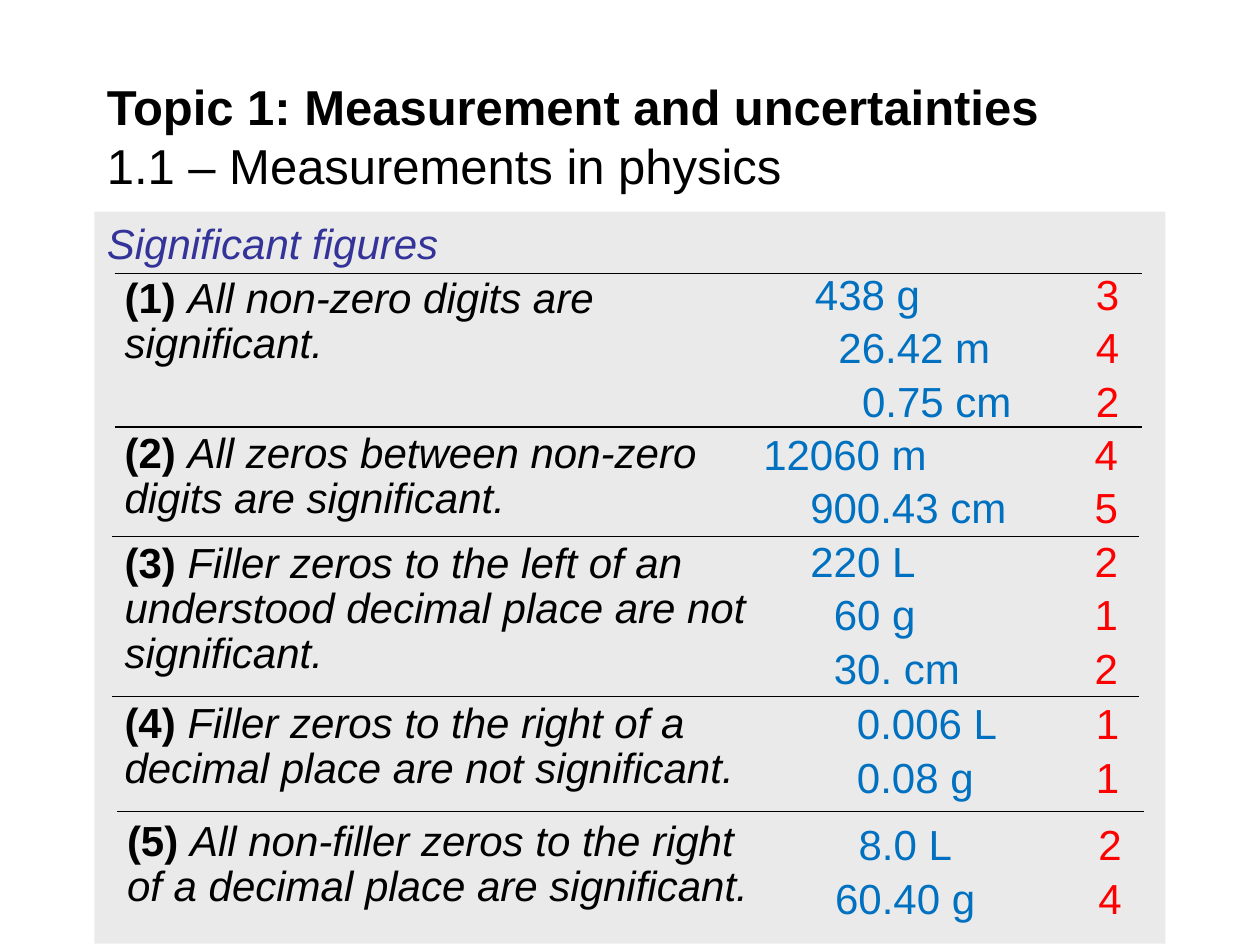
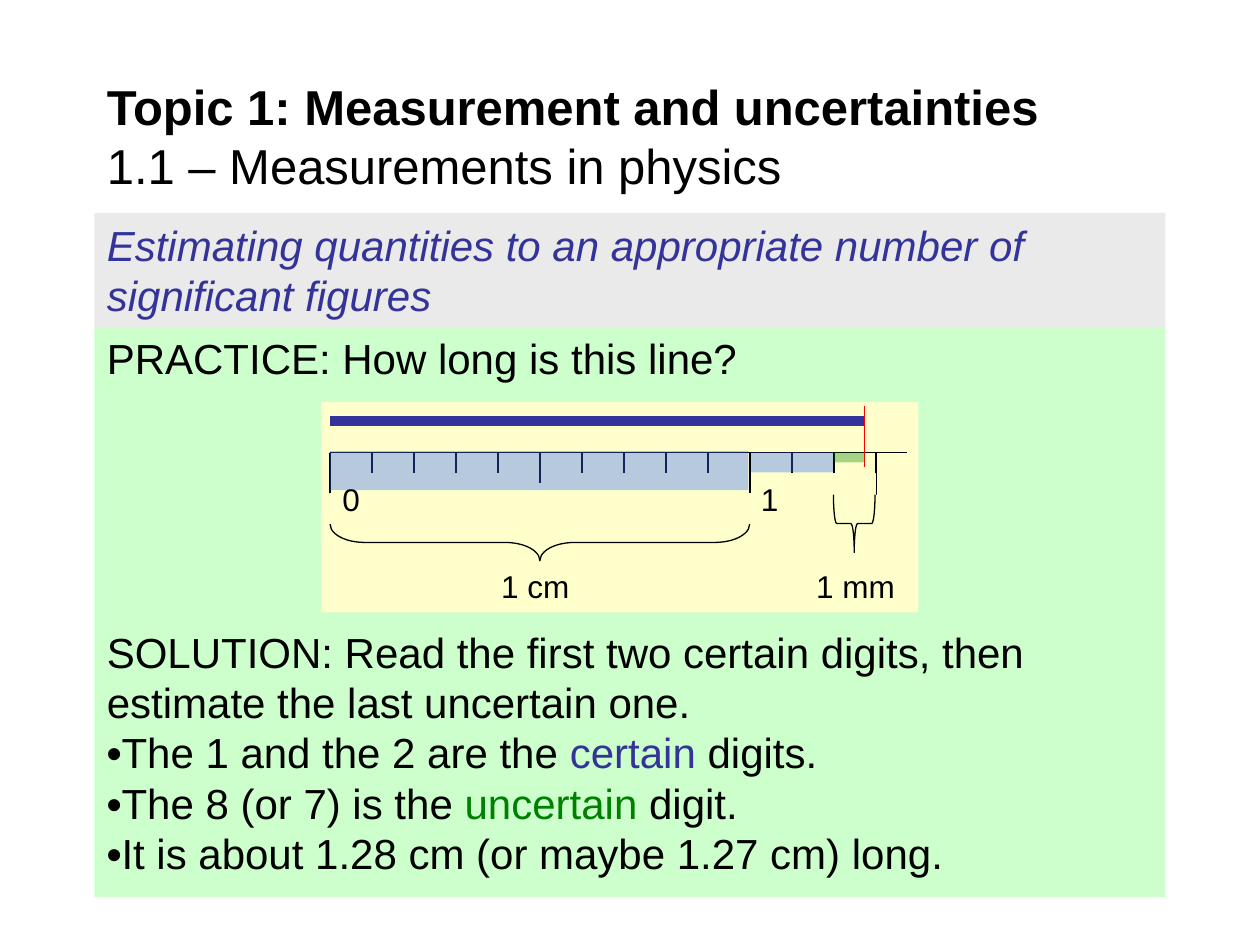
from dataclasses import dataclass

from lxml.etree import SubElement
from pptx import Presentation
from pptx.dml.color import RGBColor
from pptx.enum.shapes import MSO_CONNECTOR, MSO_SHAPE as Preset
from pptx.enum.text import MSO_ANCHOR as Anchor, PP_ALIGN as Align
from pptx.oxml.ns import qn
from pptx.util import Inches, Pt

# Shared grid: 10 columns by 7.5 rows
WIDTH, HEIGHT = Inches(10), Inches(7.5)
COLUMN, ROW = WIDTH / 10, HEIGHT / 7.5
MARGIN, CONTENT_WIDTH = 0.75, 8.5

# Shared look
FONT = "Arial"
BODY = 24
LEADING, TIGHT = 28.8, 25.8
GAP = 4.8
STEP = BODY * 0.28
HAIRLINE = 0.75
BLACK, INDIGO, BLUE, RED, GREEN = "000000", "333399", "0070C0", "FF0000", "008000"
GREY, MINT, CREAM, TINT = "EAEAEA", "CCFFCC", "FFFFCC", "3366FF"


@dataclass
class Box:
    left: float
    top: float
    width: float
    height: float

    def emu(self) -> list[int]:
        return [round(self.left * COLUMN), round(self.top * ROW),
                round(self.width * COLUMN), round(self.height * ROW)]


@dataclass
class Span:
    text: str
    color: str | None = None
    bold: bool | None = None
    italic: bool | None = None


@dataclass
class Line:
    spans: list[Span]
    size: int = BODY
    leading: float = LEADING
    color: str = BLACK
    before: float = 0
    indent: float = 0
    italic: bool = False
    bold: bool = False


@dataclass
class Rule:
    text: str
    examples: list[tuple[int, str]]
    figures: str
    line_at: tuple[float, float]
    rule_at: tuple[float, float]
    rule_width: float
    examples_at: tuple[float, float]
    figures_left: float


RULES = [
    Rule("All non-zero digits are significant.",
         [(0, "438 g"), (2, "26.42 m"), (4, "0.75 cm")], "342",
         (0.91, 2.17), (0.89, 2.15), 5.35, (6.37, 2.12), 8.6),
    Rule("All zeros between non-zero digits are significant.",
         [(0, "12060 m"), (4, "900.43 cm")], "45",
         (0.91, 3.39), (0.89, 3.38), 5.02, (5.96, 3.39), 8.59),
    Rule("Filler zeros to the left of an understood decimal place are not significant.",
         [(1, "220 L"), (3, "60 g"), (3, "30. cm")], "212",
         (0.89, 4.26), (0.89, 4.25), 5.69, (6.24, 4.24), 8.59),
    Rule("Filler zeros to the right of a decimal place are not significant.",
         [(4, "0.006 L"), (4, "0.08 g")], "11",
         (0.89, 5.53), (0.89, 5.52), 5.46, (6.33, 5.53), 8.6),
    Rule("All non-filler zeros to the right of a decimal place are significant.",
         [(2, "8.0 L"), (0, "60.40 g")], "24",
         (0.93, 6.44), (0.91, 6.46), 5.21, (6.53, 6.49), 8.62),
]


def rgb(color: str) -> RGBColor:
    return RGBColor.from_string(color)


def write(frame, lines: list[Line], anchor=Anchor.TOP, wrap: bool = True) -> None:
    frame.word_wrap = wrap
    frame.vertical_anchor = anchor
    for number, line in enumerate(lines):
        para = frame.add_paragraph() if number else frame.paragraphs[0]
        para.alignment = Align.LEFT
        para.line_spacing = Pt(line.leading)
        para.space_before = Pt(line.before)
        props = para._p.get_or_add_pPr()
        props.set("marL", str(Pt(line.indent)))
        props.set("indent", "0")
        font = para.font
        font.name, font.size = FONT, Pt(line.size)
        font.bold, font.italic = line.bold, line.italic
        font.color.rgb = rgb(line.color)
        for span in line.spans:
            run = para.add_run()
            run.text = span.text
            if span.bold is not None:
                run.font.bold = span.bold
            if span.italic is not None:
                run.font.italic = span.italic
            if span.color:
                run.font.color.rgb = rgb(span.color)


def text(slide, box: Box, lines: list[Line], anchor=Anchor.TOP, wrap: bool = True) -> None:
    write(slide.shapes.add_textbox(*box.emu()).text_frame, lines, anchor, wrap)


def block(slide, box: Box, fill: str | None = None, lines: list[Line] | None = None,
          alpha: int = 100, outline: str | None = None, preset=Preset.RECTANGLE):
    shape = slide.shapes.add_shape(preset, *box.emu())
    shape.shadow.inherit = False
    if fill:
        shape.fill.solid()
        shape.fill.fore_color.rgb = rgb(fill)
    else:
        shape.fill.background()
    if outline:
        shape.line.color.rgb = rgb(outline)
        shape.line.width = Pt(HAIRLINE)
    else:
        shape.line.fill.background()
    if alpha < 100:
        color = shape.fill._xPr.find(".//" + qn("a:srgbClr"))
        SubElement(color, qn("a:alpha"), val=str(alpha * 1000))
    if lines:
        write(shape.text_frame, lines)
    return shape


def stroke(slide, start: tuple[float, float], end: tuple[float, float],
           color: str = BLACK, weight: float = HAIRLINE) -> None:
    ends = [round(value) for x, y in (start, end) for value in (x * COLUMN, y * ROW)]
    line = slide.shapes.add_connector(MSO_CONNECTOR.STRAIGHT, *ends)
    line.line.color.rgb = rgb(color)
    line.line.width = Pt(weight)
    SubElement(line._element.spPr, qn("a:effectLst"))


def brace(slide, box: Box, curve: float) -> None:
    shape = block(slide, box, outline=BLACK, preset=Preset.LEFT_BRACE)
    shape.rotation = 270
    shape.adjustments[0] = curve


def title(slide) -> None:
    text(slide, Box(MARGIN, 0.58, CONTENT_WIDTH, 0.98), [
        Line([Span("Topic 1: Measurement and uncertainties")], 28, 34, bold=True),
        Line([Span("1.1 – Measurements in physics")], 28, 34),
    ], Anchor.MIDDLE)


def panel(slide, top: float, height: float, fill: str, lines: list[Line]) -> None:
    block(slide, Box(MARGIN, top, CONTENT_WIDTH, height), fill, lines)


def topic(words: str) -> list[Line]:
    return [Line([Span(words)], color=INDIGO, italic=True)]


def stack(slide, left: float, top: float, width: float,
          entries: list[tuple[int, str]], color: str) -> None:
    """Short entries one under another, each indented by a number of steps."""
    lines = [Line([Span(entry)], leading=TIGHT, color=color,
                  before=GAP if number else 0, indent=steps * STEP)
             for number, (steps, entry) in enumerate(entries)]
    text(slide, Box(left, top, width, 0.43 * len(lines) + 0.1), lines)


def significant_figures(slide) -> None:
    panel(slide, 1.68, 5.81, GREY, topic("Significant figures"))
    title(slide)
    for number, rule in enumerate(RULES, 1):
        left, top = rule.line_at
        stroke(slide, (left, top), (left + 8.15, top))
        text(slide, Box(*rule.rule_at, rule.rule_width, 0.9), [
            Line([Span(f"({number}) ", bold=True, italic=False), Span(rule.text)],
                 leading=TIGHT, italic=True)])
        left, top = rule.examples_at
        stack(slide, left, top, 2.2, rule.examples, BLUE)
        stack(slide, rule.figures_left, top, 0.46,
              [(0, figure) for figure in rule.figures], RED)


def ruler(slide) -> None:
    zero, edge, millimetre = 2.62, 3.59, 1 / 3
    measured = 6.86
    block(slide, Box(2.55, 3.19, 4.74, 1.67), CREAM)
    stroke(slide, (zero, 3.34), (measured, 3.34), INDIGO, 6)

    # Scale: a row of cells, covered so that marks of three lengths remain
    for cell in range(13):
        block(slide, Box(zero + cell * millimetre, edge, millimetre, millimetre),
              outline=BLACK)
    for cover in [Box(zero, 3.51, 4.33, 0.08), Box(zero, 3.92, 4.33, 0.08),
                  Box(2.78, 3.76, 1.33, 0.17), Box(4.45, 3.76, 1.33, 0.17),
                  Box(6.2, 3.76, 0.75, 0.17), Box(4.12, 3.84, 0.33, 0.17)]:
        block(slide, cover, CREAM, outline=CREAM)
    stroke(slide, (zero, edge), (7.2, edge))

    # Labels and braces
    for words, left, top, width in [("0", zero, 3.76, 0.34), ("1", 5.94, 3.76, 0.34),
                                    ("1 cm", 3.88, 4.45, 0.74),
                                    ("1 mm", 6.38, 4.45, 0.83)]:
        text(slide, Box(left, top, width, 0.4), [Line([Span(words)], 18, 21.5)], wrap=False)
    brace(slide, Box(4.14, 2.64, 0.29, 3.33), 0.95)
    brace(slide, Box(6.55, 3.99, 0.46, 0.33), 0.08)

    # Reading: centimetre, millimetres and the estimated part
    stroke(slide, (measured, 3.22), (measured, 3.71), RED)
    block(slide, Box(zero, 3.58, 3.32, 0.31), TINT, alpha=35)
    block(slide, Box(5.96, edge, 0.65, 0.16), TINT, alpha=35)
    block(slide, Box(6.62, edge, 0.24, 0.08), GREEN, alpha=35)


def estimating(slide) -> None:
    answers = [
        [Span("The 1 and the 2 are the "), Span("certain", INDIGO), Span(" digits.")],
        [Span("The 8 (or 7) is the "), Span("uncertain", GREEN), Span(" digit.")],
        [Span("It is about 1.28 cm (or maybe 1.27 cm) long.")],
    ]
    panel(slide, 2.59, 4.53, MINT, [
        Line([Span("PRACTICE: How long is this line?")]),
        Line([Span("SOLUTION: Read the first two certain digits, "
                   "then estimate the last uncertain one.")], before=139),
        *[Line([Span("•", bold=True), *answer]) for answer in answers],
    ])
    panel(slide, 1.69, 0.91, GREY, topic(
        "Estimating quantities to an appropriate number of significant figures"))
    title(slide)
    ruler(slide)


def main() -> None:
    deck = Presentation()
    deck.slide_width, deck.slide_height = WIDTH, HEIGHT
    blank = deck.slide_layouts[6]
    for build in (significant_figures, estimating):
        build(deck.slides.add_slide(blank))
    deck.save("out.pptx")


if __name__ == "__main__":
    main()
